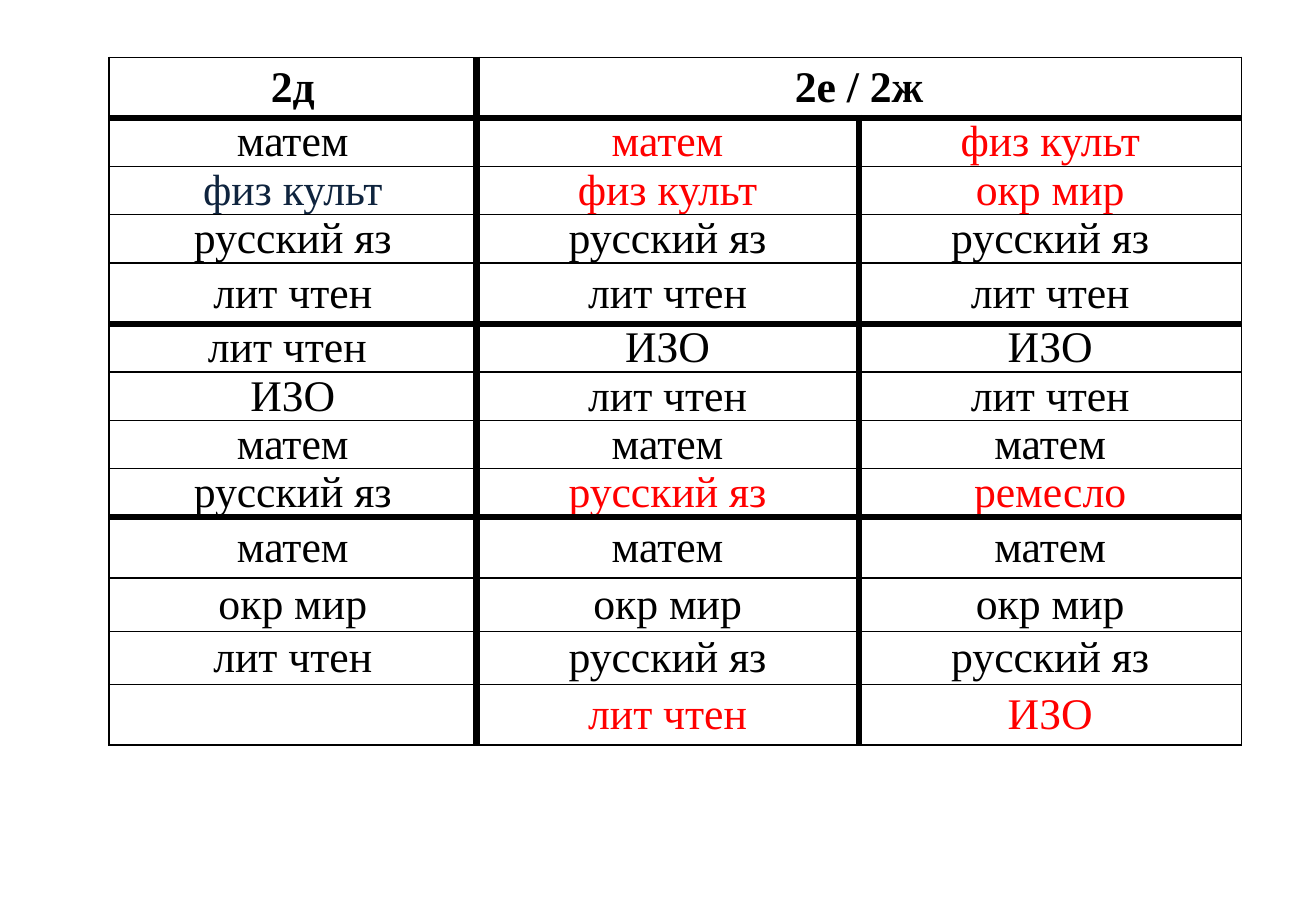
from lxml.etree import SubElement
from pptx import Presentation
from pptx.dml.color import RGBColor
from pptx.enum.text import MSO_ANCHOR, PP_ALIGN
from pptx.oxml.ns import qn
from pptx.util import Inches, Pt

COLOURS = {"black": "000000", "red": "FF0000", "navy": "0F243E"}
THIN, THICK = 1, 4.5

# Each class's lessons, grouped by day
HEADER = ("2д", "2е / 2ж", "")
DAYS = [
    [("матем", "матем", "физ культ"),
     ("физ культ", "физ культ", "окр мир"),
     ("русский яз", "русский яз", "русский яз"),
     ("лит чтен", "лит чтен", "лит чтен")],
    [("лит чтен ", "ИЗО", "ИЗО"),
     ("ИЗО", "лит чтен", "лит чтен"),
     ("матем", "матем", "матем"),
     ("русский яз", "русский яз", "ремесло")],
    [("матем", "матем", "матем"),
     ("окр мир", "окр мир", "окр мир"),
     ("лит чтен", "русский яз", "русский яз"),
     ("", "лит чтен", "ИЗО")],
]
RED_ROWS = (1, 2, 8, 12)  # the last two classes are red here
LAST_DAY_START = 9
COLUMN_WIDTHS = (3.27, 3.4, 3.41)
ROW_HEIGHTS = (0.54, 0.43, 0.43, 0.43, 0.54, 0.43, 0.43, 0.43, 0.43,
               0.54, 0.48, 0.47, 0.54)


def lesson_colour(row, column):
    if row in RED_ROWS and column > 0:
        return COLOURS["red"]
    return COLOURS["navy" if (row, column) == (2, 0) else "black"]


def set_borders(cell, widths):
    properties = cell._tc.get_or_add_tcPr()
    for side, width in widths.items():
        border = SubElement(properties, qn(f"a:ln{side}"), w=str(Pt(width)))
        fill = SubElement(border, qn("a:solidFill"))
        SubElement(fill, qn("a:srgbClr"), val=COLOURS["black"])


def write_lesson(cell, lesson, row, column):
    side_margin = Inches(0.07 if row >= LAST_DAY_START else 0.06)
    cell_format = {
        "margin_left": side_margin, "margin_right": side_margin,
        "margin_top": 0, "margin_bottom": 0,
        "vertical_anchor": MSO_ANCHOR.MIDDLE,
    }
    for name, value in cell_format.items():
        setattr(cell, name, value)
    if not lesson:
        return
    paragraph = cell.text_frame.paragraphs[0]
    paragraph.alignment = PP_ALIGN.CENTER
    run = paragraph.add_run()
    run.text = lesson
    font_format = {"name": "Times New Roman", "size": Pt(28), "bold": row == 0}
    for name, value in font_format.items():
        setattr(run.font, name, value)
    run.font.color.rgb = RGBColor.from_string(lesson_colour(row, column))


def add_timetable(slide, left, top):
    lessons = [HEADER] + [lesson for day in DAYS for lesson in day]
    timetable = slide.shapes.add_table(
        len(lessons), len(HEADER), Inches(left), Inches(top),
        Inches(sum(COLUMN_WIDTHS)), Inches(sum(ROW_HEIGHTS))).table
    timetable.first_row = timetable.horz_banding = False
    for column, width in zip(timetable.columns, COLUMN_WIDTHS):
        column.width = Inches(width)
    for row, height in zip(timetable.rows, ROW_HEIGHTS):
        row.height = Inches(height)
    timetable.cell(0, 1).merge(timetable.cell(0, 2))

    # Thick rules stand between days and between classes
    day_edges = [1 + sum(map(len, DAYS[:n])) for n in range(len(DAYS))]
    for r, row_lessons in enumerate(lessons):
        class_edges = (1, 2) if r else (1,)
        for c, lesson in enumerate(row_lessons):
            cell = timetable.cell(r, c)
            write_lesson(cell, lesson, r, c)
            set_borders(cell, {
                "L": THICK if c in class_edges else THIN,
                "R": THICK if c + 1 in class_edges else THIN,
                "T": THICK if r in day_edges else THIN,
                "B": THICK if r + 1 in day_edges else THIN,
            })
            cell.fill.background()


def main():
    deck = Presentation()
    deck.slide_width, deck.slide_height = Inches(11.71), Inches(8.11)
    slide = deck.slides.add_slide(deck.slide_layouts[6])
    add_timetable(slide, 0.97, 0.51)
    deck.save("out.pptx")


if __name__ == "__main__":
    main()
